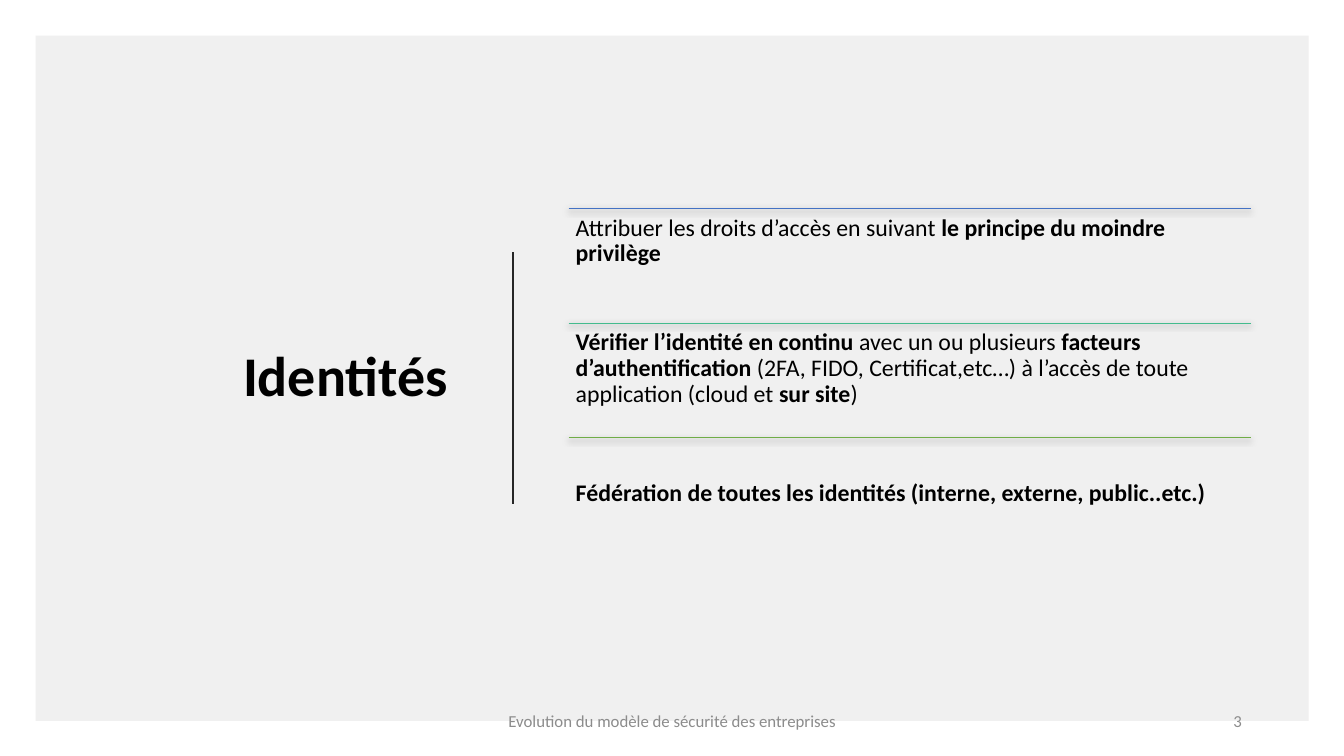
from lxml import etree
from pptx import Presentation
from pptx import util as u
from pptx.dml.color import RGBColor
from pptx.enum import shapes, text
from pptx.oxml import ns

COLOURS = {
    "panel": "E7E6E6",
    "ink": "000000",
    "divider": "262626",
    "footer": "8C8C8C",
    "rights": "4472C4",
    "verification": "43BB8D",
    "federation": "70AD47",
}
PRINCIPLES_LEFT, PRINCIPLES_TOP = 14.33, 5.25
PRINCIPLES_WIDTH, PRINCIPLES_PITCH = 17.2, 2.89
PRINCIPLES = [
    ("rights", 0, [
        ("Attribuer les droits d’accès en suivant ", False),
        ("le principe du moindre privilège", True),
    ]),
    ("verification", 0, [
        ("Vérifier l’identité en continu", True),
        (" avec un ou plusieurs ", False),
        ("facteurs d’authentification", True),
        (" (2FA, FIDO, Certificat,etc…) à l’accès de toute application (cloud et ", False),
        ("sur site", True),
        (")", False),
    ]),
    ("federation", 0.9, [
        ("Fédération de toutes les identités (interne, externe, public..etc.)", True),
    ]),
]


def rgb(name):
    return RGBColor.from_string(COLOURS[name])


def add_child(parent, tag, **attributes):
    return etree.SubElement(parent, ns.qn(tag), attributes)


def add_panel(slide):
    panel = slide.shapes.add_shape(
        shapes.MSO_SHAPE.RECTANGLE, u.Cm(0.9), u.Cm(0.9), u.Cm(32.08), u.Cm(17.27))
    panel.shadow.inherit = False
    panel.line.fill.background()
    panel.fill.solid()
    panel.fill.fore_color.rgb = rgb("panel")
    tint = panel._element.spPr.find(ns.qn("a:solidFill"))[0]
    add_child(tint, "a:alpha", val="60000")


def add_rule(slide, start, end, colour, width, shadowed=False):
    rule = slide.shapes.add_connector(
        shapes.MSO_CONNECTOR.STRAIGHT, *map(u.Cm, (*start, *end)))
    rule.line.color.rgb = rgb(colour)
    rule.line.width = u.Pt(width)
    effects = add_child(rule._element.spPr, "a:effectLst")
    if shadowed:
        shadow = add_child(effects, "a:outerShdw", blurRad="57150", dist="19050",
                           dir="5400000", algn="ctr", rotWithShape="0")
        tint = add_child(shadow, "a:srgbClr", val=COLOURS["ink"])
        add_child(tint, "a:alpha", val="63000")


def add_text(slide, box, runs, size, colour="ink", align=text.PP_ALIGN.LEFT,
             anchor=text.MSO_ANCHOR.MIDDLE, spacing=1.0, inset=None):
    frame = slide.shapes.add_textbox(*map(u.Cm, box)).text_frame
    frame.word_wrap = True
    frame.vertical_anchor = anchor
    if inset is not None:
        frame.margin_left = frame.margin_right = u.Cm(inset)
        frame.margin_top = frame.margin_bottom = u.Cm(inset)
    paragraph = frame.paragraphs[0]
    paragraph.alignment = align
    paragraph.line_spacing = spacing
    for wording, bold in runs:
        run = paragraph.add_run()
        run.text = wording
        run.font.name = "Calibri"
        run.font.size = u.Pt(size)
        run.font.bold = bold
        run.font.color.rgb = rgb(colour)


def add_principle(slide, top, colour, drop, runs):
    right = PRINCIPLES_LEFT + PRINCIPLES_WIDTH
    add_rule(slide, (PRINCIPLES_LEFT, top), (right, top), colour, 0.5, shadowed=True)
    add_text(slide, (PRINCIPLES_LEFT, top + drop, PRINCIPLES_WIDTH, PRINCIPLES_PITCH),
             runs, 17, anchor=text.MSO_ANCHOR.TOP, spacing=0.9, inset=0.18)


def main():
    """Build the slide on identities and save it."""
    deck = Presentation()
    deck.slide_width, deck.slide_height = u.Cm(33.87), u.Cm(19.05)
    slide = deck.slides.add_slide(deck.slide_layouts[6])

    add_panel(slide)
    add_text(slide, (2.34, 2.97, 9.19, 13.13), [("Identités", True)], 40,
             align=text.PP_ALIGN.RIGHT, spacing=0.9)
    add_rule(slide, (12.93, 6.35), (12.93, 12.7), "divider", 1.5)
    for row, principle in enumerate(PRINCIPLES):
        add_principle(slide, PRINCIPLES_TOP + row * PRINCIPLES_PITCH, *principle)

    add_text(slide, (11.23, 17.65, 11.43, 1.02),
             [("Evolution du modèle de sécurité des entreprises", False)], 12,
             "footer", text.PP_ALIGN.CENTER)
    add_text(slide, (23.93, 17.65, 7.62, 1.02), [("3", False)], 12,
             "footer", text.PP_ALIGN.RIGHT)
    deck.save("out.pptx")


if __name__ == "__main__":
    main()
